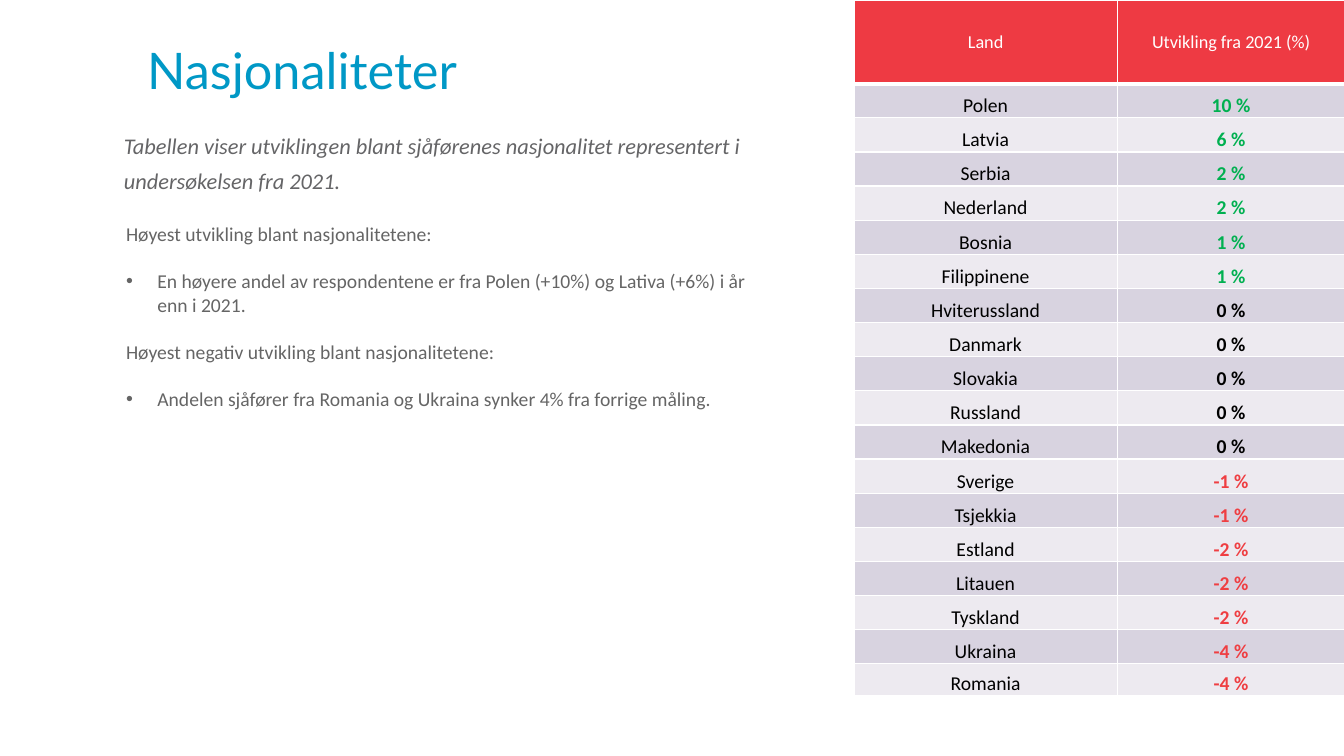
from dataclasses import dataclass

from lxml.etree import SubElement
from pptx import Presentation
from pptx.dml.color import RGBColor
from pptx.enum.text import MSO_ANCHOR as Anchor, MSO_AUTO_SIZE as AutoSize, PP_ALIGN as Align
from pptx.oxml import parse_xml
from pptx.oxml.ns import nsdecls, qn
from pptx.util import Inches, Pt


@dataclass(frozen=True)
class Theme:
    title_font: str = "Lato"
    body_font: str = "Calibri"
    title: str = "0098C6"
    intro: str = "656567"
    body: str = "656565"
    header: str = "EE3A43"
    bands: tuple = ("D8D3E0", "EDEAF0")
    white: str = "FFFFFF"
    black: str = "000000"
    growth: str = "00B050"
    decline: str = "EF3E42"
    title_size: int = 36
    intro_size: int = 16
    body_size: int = 14
    header_size: int = 13
    paragraph_gap: int = 17


THEME = Theme()

INTRO = ("Tabellen viser utviklingen blant sjåførenes nasjonalitet representert i "
         "undersøkelsen fra 2021.")
FINDINGS = [
    ("Høyest utvikling blant nasjonalitetene:", False),
    ("En høyere andel av respondentene er fra Polen (+10%) og Lativa (+6%) i år enn i 2021.", True),
    ("Høyest negativ utvikling blant nasjonalitetene:", False),
    ("Andelen sjåfører fra Romania og Ukraina synker 4% fra forrige måling.", True),
]
HEADERS = ("Land", "Utvikling fra 2021 (%)")
CHANGES = [
    ("Polen", 10), ("Latvia", 6), ("Serbia", 2), ("Nederland", 2), ("Bosnia", 1),
    ("Filippinene", 1), ("Hviterussland", 0), ("Danmark", 0), ("Slovakia", 0),
    ("Russland", 0), ("Makedonia", 0), ("Sverige", -1), ("Tsjekkia", -1),
    ("Estland", -2), ("Litauen", -2), ("Tyskland", -2), ("Ukraina", -4), ("Romania", -4),
]


def place(shape, box):
    shape.left, shape.top, shape.width, shape.height = (Inches(length) for length in box)


def style(paragraph, size, color, name=THEME.body_font, bold=False, italic=False):
    font = paragraph.font
    font.name, font.size, font.bold, font.italic = name, Pt(size), bold, italic
    font.color.rgb = RGBColor.from_string(color)


def set_margins(target, left, top, right, bottom):
    target.margin_left, target.margin_top = Inches(left), Inches(top)
    target.margin_right, target.margin_bottom = Inches(right), Inches(bottom)


def add_title(slide, box):
    title = slide.shapes.title
    place(title, box)
    frame = title.text_frame
    frame.text = "Nasjonaliteter"
    frame.vertical_anchor = Anchor.MIDDLE
    frame.auto_size = AutoSize.NONE
    paragraph = frame.paragraphs[0]
    paragraph.alignment = Align.LEFT
    style(paragraph, THEME.title_size, THEME.title, THEME.title_font)


def add_intro(slide, box):
    frame = slide.shapes.add_textbox(*(Inches(length) for length in box)).text_frame
    frame.word_wrap = True
    set_margins(frame, 0, 0, 0, 0)
    frame.text = INTRO
    paragraph = frame.paragraphs[0]
    paragraph.line_spacing = 1.3
    paragraph.space_after = Pt(6)
    style(paragraph, THEME.intro_size, THEME.intro, italic=True)


def set_bullet(paragraph, bulleted):
    properties = paragraph._p.get_or_add_pPr()
    left, indent = (0.49, -0.31) if bulleted else (0.18, 0)
    properties.set("marL", str(Inches(left)))
    properties.set("indent", str(Inches(indent)))
    if bulleted:
        SubElement(properties, qn("a:buFont"), typeface="Arial")
        SubElement(properties, qn("a:buChar"), char="•")
    else:
        SubElement(properties, qn("a:buNone"))


def add_findings(slide, box):
    body = slide.placeholders[1]
    place(body, box)
    frame = body.text_frame
    frame.auto_size = AutoSize.NONE
    frame.vertical_anchor = Anchor.TOP
    for index, (text, bulleted) in enumerate(FINDINGS):
        paragraph = frame.add_paragraph() if index else frame.paragraphs[0]
        paragraph.text = text
        set_bullet(paragraph, bulleted)
        paragraph.space_before = Pt(THEME.paragraph_gap if index else 0)
        style(paragraph, THEME.body_size, THEME.body)


def set_borders(cell, bottom_width):
    properties = cell._tc.get_or_add_tcPr()
    widths = {"lnL": 1, "lnR": 1, "lnT": 1, "lnB": bottom_width}
    for position, (side, width) in enumerate(widths.items()):
        properties.insert(position, parse_xml(
            f'<a:{side} {nsdecls("a")} w="{Pt(width)}"><a:solidFill>'
            f'<a:srgbClr val="{THEME.white}"/></a:solidFill></a:{side}>'))


def fill_cell(cell, text, fill, color, header=False, bold=False):
    cell.text = text
    cell.fill.solid()
    cell.fill.fore_color.rgb = RGBColor.from_string(fill)
    cell.vertical_anchor = Anchor.MIDDLE if header else Anchor.BOTTOM
    set_margins(cell, *((0.13, 0.07, 0.13, 0.07) if header else (0.01, 0.01, 0.01, 0)))
    set_borders(cell, 3 if header else 1)
    paragraph = cell.text_frame.paragraphs[0]
    paragraph.alignment = Align.CENTER
    style(paragraph, THEME.header_size if header else THEME.body_size, color, bold=bold)


def change_color(change):
    if change == 0:
        return THEME.black
    return THEME.growth if change > 0 else THEME.decline


def add_change_table(slide, box):
    left, top, width, height = box
    header_height, last_height, country_width = 0.83, 0.32, 2.61
    row_height = (height - header_height - last_height) / (len(CHANGES) - 1)
    table = slide.shapes.add_table(
        len(CHANGES) + 1, len(HEADERS), *(Inches(length) for length in box)).table
    table.columns[0].width = Inches(country_width)
    table.columns[1].width = Inches(width - country_width)
    heights = [header_height] + [row_height] * (len(CHANGES) - 1) + [last_height]
    for row, length in zip(table.rows, heights):
        row.height = Inches(length)
    for column, text in enumerate(HEADERS):
        fill_cell(table.cell(0, column), text, THEME.header, THEME.white, header=True)
    for index, (country, change) in enumerate(CHANGES):
        band = THEME.bands[index % 2]
        fill_cell(table.cell(index + 1, 0), country, band, THEME.black)
        fill_cell(table.cell(index + 1, 1), f"{change} %", band, change_color(change), bold=True)


def add_nationality_slide(presentation):
    slide = presentation.slides.add_slide(presentation.slide_layouts[1])
    add_title(slide, (1.36, 0.06, 11.3, 1.25))
    add_change_table(slide, (8.47, 0, 4.87, 6.91))
    add_intro(slide, (1.23, 1.23, 6.37, 0.91))
    add_findings(slide, (0.97, 2.15, 6.71, 5.17))


def main():
    presentation = Presentation()
    presentation.slide_width = Inches(13.33)
    presentation.slide_height = Inches(7.5)
    add_nationality_slide(presentation)
    presentation.save("out.pptx")


if __name__ == "__main__":
    main()
